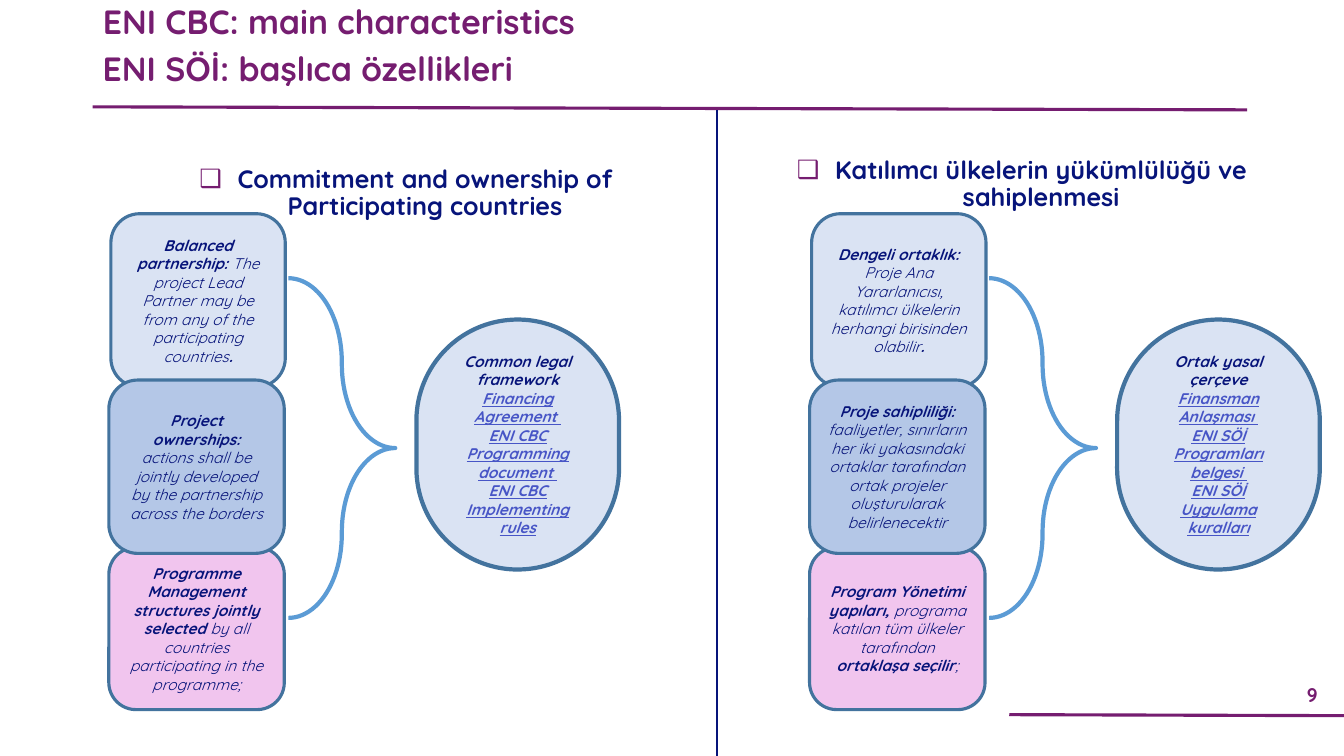
from typing import NamedTuple

from lxml.etree import SubElement
from pptx import Presentation
from pptx.dml.color import RGBColor
from pptx.enum.shapes import MSO_CONNECTOR, MSO_SHAPE
from pptx.enum.text import MSO_ANCHOR, MSO_AUTO_SIZE, PP_ALIGN
from pptx.oxml.ns import qn
from pptx.util import Emu, Pt

PX = 9144  # 100 px to the inch
PURPLE, NAVY, LINK = "751D70", "07147A", "4755C6"
PALE, BLUE, PINK = "DAE3F3", "B4C7E7", "F1C5EE"
EDGE, BRACE = "43739E", "5B9BD5"
PANEL_SHIFT = 695


class Area(NamedTuple):
    left: int
    top: int
    width: int
    height: int


class Span(NamedTuple):
    text: str
    bold: bool = True
    link: bool = False


class Card(NamedTuple):
    area: Area
    fill: str
    spans: list[Span]


class Panel(NamedTuple):
    shift: int
    heading_area: Area
    heading: str
    cards: list[list[Span]]
    framework: list[Span]


# Card places in drawing order: top, bottom, then the middle one over both
CARD_STYLES = [
    (Area(110, 212, 173, 172), PALE),
    (Area(108, 543, 174, 161), PINK),
    (Area(108, 377, 174, 172), BLUE),
]

PANELS = [
    Panel(
        0, Area(108, 160, 589, 564),
        "Commitment and ownership of Participating countries",
        [
            [Span("Balanced partnership: "),
             Span("The project Lead Partner may be from any of the participating countries", False),
             Span(".")],
            [Span("Programme Management structures jointly selected "),
             Span("by all countries participating in the programme;", False)],
            [Span("Project ownerships: "),
             Span("actions shall be jointly developed by the partnership across the borders", False)],
        ],
        [Span("Common legal framework"),
         Span("Financing Agreement ", link=True),
         Span("ENI CBC Programming document ", link=True),
         Span("ENI CBC Implementing rules", link=True)],
    ),
    Panel(
        PANEL_SHIFT, Area(719, 151, 589, 564),
        "Katılımcı ülkelerin yükümlülüğü ve sahiplenmesi",
        [
            [Span("Dengeli ortaklık: "),
             Span("Proje Ana Yararlanıcısı, katılımcı ülkelerin herhangi birisinden olabilir", False),
             Span(".")],
            [Span("Program Yönetimi yapıları, "),
             Span("programa katılan tüm ülkeler tarafından ", False),
             Span("ortaklaşa seçilir"), Span(";", False)],
            [Span("Proje sahipliliği: "),
             Span("faaliyetler, sınırların her iki yakasındaki ortaklar tarafından "
                  "ortak projeler oluşturularak belirlenecektir", False)],
        ],
        [Span("Ortak yasal çerçeve"),
         Span("Finansman Anlaşması ", link=True),
         Span("ENI SÖİ Programları belgesi ", link=True),
         Span("ENI SÖİ Uygulama kuralları", link=True)],
    ),
]


def color(value: str) -> RGBColor:
    return RGBColor.from_string(value)


def emu(area: Area, shift: int = 0) -> list[Emu]:
    moved = area._replace(left=area.left + shift)
    return [Emu(length * PX) for length in moved]


def apply(target, values: dict) -> None:
    for name, value in values.items():
        setattr(target, name, value)


def write(para, text: str, size: int, ink: str, **values) -> None:
    span = para.add_run()
    span.text = text
    apply(span.font, {"name": "Quicksand", "size": Pt(size), "bold": True, **values})
    span.font.color.rgb = color(ink)


def place(box, area: Area) -> None:
    apply(box, dict(zip(("left", "top", "width", "height"), emu(area))))


def fill_text_box(box, text: str, size: int, ink: str, align: PP_ALIGN,
                  anchor: MSO_ANCHOR = MSO_ANCHOR.TOP, bullet: bool = False) -> None:
    apply(box.text_frame, {"word_wrap": True, "auto_size": MSO_AUTO_SIZE.NONE,
                           "vertical_anchor": anchor})
    para = box.text_frame.paragraphs[0]
    if bullet:
        add_bullet(para)
    apply(para, {"alignment": align, "line_spacing": 0.9, "space_before": Pt(0)})
    write(para, text, size, ink)


def add_bullet(para) -> None:
    props = para._p.get_or_add_pPr()
    props.set("marL", str(38 * PX))
    props.set("indent", str(-38 * PX))
    SubElement(SubElement(props, qn("a:buClr")), qn("a:srgbClr")).set("val", PURPLE)
    SubElement(props, qn("a:buChar")).set("char", "❑")


def add_rule(page, start: tuple[int, int], end: tuple[int, int], ink: str, width: float) -> None:
    ends = [Emu(length * PX) for length in (*start, *end)]
    rule = page.shapes.add_connector(MSO_CONNECTOR.STRAIGHT, *ends)
    rule.line.color.rgb = color(ink)
    rule.line.width = Pt(width)
    SubElement(rule._element.spPr, qn("a:effectLst"))


def add_outlined(page, kind: MSO_SHAPE, area: Area, shift: int, ink: str,
                 width: float, fill: str | None = None):
    shape = page.shapes.add_shape(kind, *emu(area, shift))
    shape.shadow.inherit = False
    shape.line.color.rgb = color(ink)
    shape.line.width = Pt(width)
    if fill:
        shape.fill.solid()
        shape.fill.fore_color.rgb = color(fill)
    else:
        shape.fill.background()
    return shape


def write_spans(para, spans: list[Span]) -> None:
    para.alignment = PP_ALIGN.CENTER
    for span in spans:
        write(para, span.text, 11, LINK if span.link else NAVY,
              bold=span.bold, italic=True, underline=span.link)


def draw_panel(page, panel: Panel, heading_box) -> None:
    place(heading_box, panel.heading_area)
    fill_text_box(heading_box, panel.heading, 18, NAVY, PP_ALIGN.CENTER, bullet=True)

    # Legal framework, one paragraph for each document
    oval = add_outlined(page, MSO_SHAPE.ROUNDED_RECTANGLE, Area(413, 317, 201, 248),
                        panel.shift, EDGE, 3, PALE)
    oval.adjustments[0] = 0.5
    frame = oval.text_frame
    for number, span in enumerate(panel.framework):
        write_spans(frame.add_paragraph() if number else frame.paragraphs[0], [span])

    # Brace from the cards to the framework
    brace = add_outlined(page, MSO_SHAPE.LEFT_BRACE, Area(286, 276, 106, 337),
                         panel.shift, BRACE, 3)
    brace.rotation = 180
    brace.adjustments[0] = 0.785

    # Stacked cards
    for (area, fill), spans in zip(CARD_STYLES, panel.cards):
        card = Card(area, fill, spans)
        shape = add_outlined(page, MSO_SHAPE.ROUNDED_RECTANGLE, card.area,
                             panel.shift, EDGE, 2.25, card.fill)
        write_spans(shape.text_frame.paragraphs[0], card.spans)


def main() -> None:
    deck = Presentation()
    deck.slide_width, deck.slide_height = Emu(1333 * PX), Emu(750 * PX)
    page = deck.slides.add_slide(deck.slide_layouts.get_by_name("Two Content"))
    title, *heading_boxes = page.placeholders

    # Title in two languages
    place(title, Area(92, 0, 973, 65))
    fill_text_box(title, "ENI CBC: main characteristics", 24, PURPLE, PP_ALIGN.JUSTIFY)
    subtitle = page.shapes.add_textbox(*emu(Area(92, 47, 973, 65)))
    fill_text_box(subtitle, "ENI SÖİ: başlıca özellikleri", 24, PURPLE, PP_ALIGN.JUSTIFY)

    # Rules and page number
    add_rule(page, (92, 106), (1237, 109), PURPLE, 2.25)
    add_rule(page, (1001, 709), (1335, 710), PURPLE, 2.25)
    number = page.shapes.add_textbox(*emu(Area(1270, 673, 63, 36)))
    fill_text_box(number, "9", 14, PURPLE, PP_ALIGN.CENTER, MSO_ANCHOR.MIDDLE)

    # One panel for each language, with a divider between them
    for panel, heading_box in zip(PANELS, heading_boxes):
        draw_panel(page, panel, heading_box)
    add_rule(page, (711, 750), (711, 109), NAVY, 1.5)

    deck.save("out.pptx")


if __name__ == "__main__":
    main()
